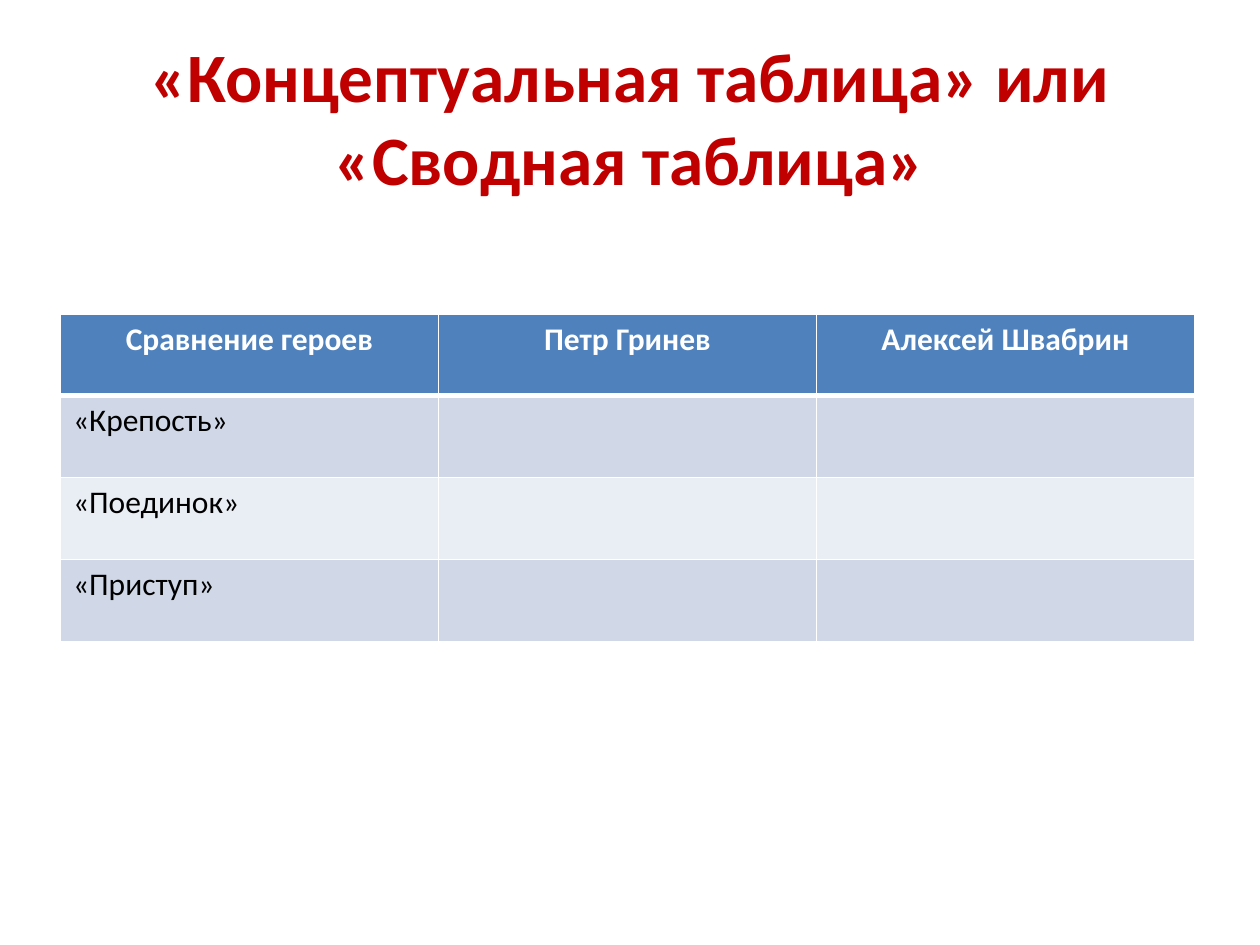
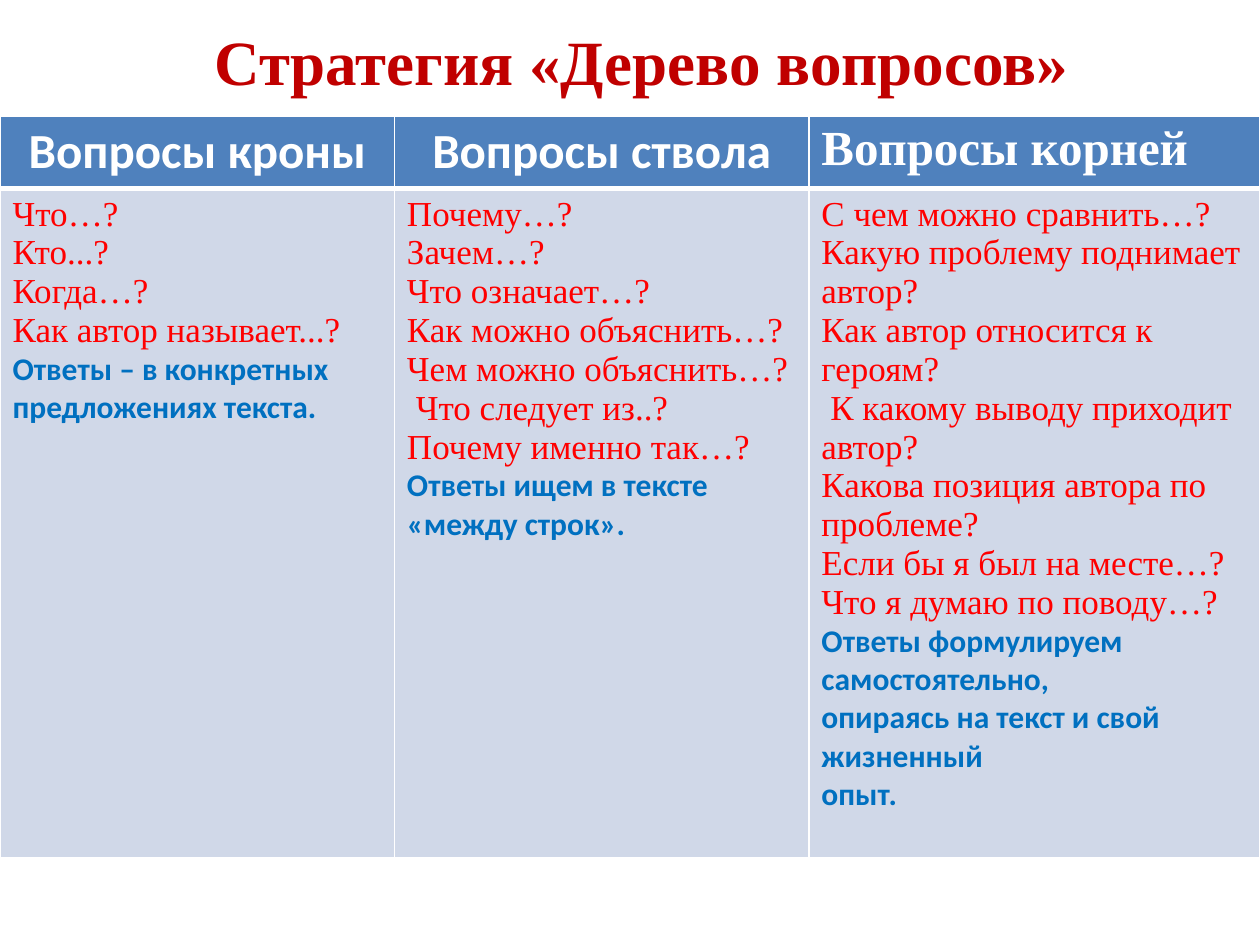
from lxml.etree import SubElement as Sub
from pptx import Presentation
from pptx.dml.color import RGBColor as RGB
from pptx.enum.text import MSO_ANCHOR as Anchor, MSO_AUTO_SIZE as Fit, PP_ALIGN as Align
from pptx.oxml.ns import qn
from pptx.util import Inches, Pt

WHITE = RGB(0xFF, 0xFF, 0xFF)
BLACK = RGB(0x00, 0x00, 0x00)
CRIMSON = RGB(0xC0, 0x00, 0x00)
RED = RGB(0xFF, 0x00, 0x00)
BLUE = RGB(0x00, 0x70, 0xC0)
HEAD = RGB(0x4F, 0x81, 0xBD)
BANDS = RGB(0xD0, 0xD8, 0xE8), RGB(0xE9, 0xED, 0xF4)
SANS, SERIF = "Calibri", "Times New Roman"
TITLE_ONLY = 5

HEROES = ["Сравнение героев", "Петр Гринев", "Алексей Швабрин"]
SCENES = ["«Крепость»", "«Поединок»", "«Приступ»"]

# Each column: heading, heading font, alignment, width, questions, answers
TREE = [
    ("Вопросы кроны", SANS, Align.CENTER, 3.13,
     ["Что…?", "Кто...?", "Когда…?", "Как автор называет...?"],
     ["Ответы – в конкретных", "предложениях текста."]),
    ("Вопросы ствола", SANS, Align.CENTER, 3.29,
     ["Почему…?", "Зачем…?", "Что означает…?", "Как можно объяснить…?",
      "Чем можно объяснить…?", " Что следует из..?", "Почему именно так…?"],
     ["Ответы ищем в тексте", "«между строк»."]),
    ("Вопросы корней", SERIF, Align.LEFT, 3.58,
     ["С чем можно сравнить…?", "Какую проблему поднимает автор?",
      "Как автор относится к героям?", " К какому выводу приходит автор?",
      "Какова позиция автора по проблеме?", "Если бы я был на месте…?",
      "Что я думаю по поводу…?"],
     ["Ответы формулируем самостоятельно,",
      "опираясь на текст и свой жизненный", "опыт."]),
]


def style(para, size, color, bold=False, face=SANS, align=Align.LEFT):
    para.alignment = align
    font = para.font
    font.name, font.size, font.bold = face, Pt(size), bold
    font.color.rgb = color


def write(frame, lines, *args, **kw):
    """Add lines to a frame, filling its empty first paragraph first."""
    for line in lines:
        para = frame.paragraphs[-1]
        if para.text:
            para = frame.add_paragraph()
        para.text = line.lstrip()
        if line.startswith(" "):
            para._p.get_or_add_pPr().set("indent", str(Inches(0.07)))
        style(para, *args, **kw)


def add_title(slide, text, box, size, face, anchor):
    title = slide.shapes.title
    title.left, title.top, title.width, title.height = map(Inches, box)
    frame = title.text_frame
    frame.auto_size, frame.vertical_anchor = Fit.NONE, anchor
    write(frame, [text], size, CRIMSON, True, face, Align.CENTER)


def paint(cell, color, base):
    """Give a cell its fill and white borders; base is the bottom width."""
    props = cell._tc.get_or_add_tcPr()
    for side, width in ("L", 1), ("R", 1), ("T", 1), ("B", base):
        line = Sub(props, qn("a:ln" + side), w=str(Pt(width)))
        fill = Sub(line, qn("a:solidFill"))
        Sub(fill, qn("a:srgbClr"), val=str(WHITE))
    cell.fill.solid()
    cell.fill.fore_color.rgb = color


def add_grid(slide, left, top, cols, rows):
    """Add a banded table with the given column widths and row heights."""
    sizes = map(Inches, (left, top, sum(cols), sum(rows)))
    grid = slide.shapes.add_table(len(rows), len(cols), *sizes).table
    for col, width in zip(grid.columns, cols):
        col.width = Inches(width)
    for i, (row, height) in enumerate(zip(grid.rows, rows)):
        row.height = Inches(height)
        for cell in row.cells:
            if i:
                paint(cell, BANDS[(i - 1) % 2], 1)
            else:
                paint(cell, HEAD, 3)
    return grid


def hero_slide(slide):
    add_title(slide, "«Концептуальная таблица» или «Сводная таблица»",
              (0.5, 0.3, 9, 1.25), 39.6, SANS, Anchor.MIDDLE)
    grid = add_grid(slide, 0.48, 2.49, [3] * 3, [0.65] * 4)
    for i, name in enumerate(HEROES):
        write(grid.cell(0, i).text_frame, [name], 18, WHITE, True, align=Align.CENTER)
    for i, scene in enumerate(SCENES, 1):
        write(grid.cell(i, 0).text_frame, [scene], 18, BLACK)


def tree_slide(slide):
    add_title(slide, "Стратегия «Дерево вопросов»",
              (0.59, 0.13, 9, 1.25), 36, SERIF, Anchor.TOP)
    grid = add_grid(slide, 0, 0.92, [col[3] for col in TREE], [0.57, 5.31])
    for i, (name, face, align, _, asks, replies) in enumerate(TREE):
        write(grid.cell(0, i).text_frame, [name], 28, WHITE, True, face, align)
        body = grid.cell(1, i).text_frame
        write(body, asks, 20, RED, face=SERIF)
        write(body, replies, 18, BLUE, True)


def main():
    deck = Presentation()
    deck.slide_width, deck.slide_height = Inches(10), Inches(7.5)
    for build in hero_slide, tree_slide:
        build(deck.slides.add_slide(deck.slide_layouts[TITLE_ONLY]))
    deck.save("out.pptx")


if __name__ == "__main__":
    main()
